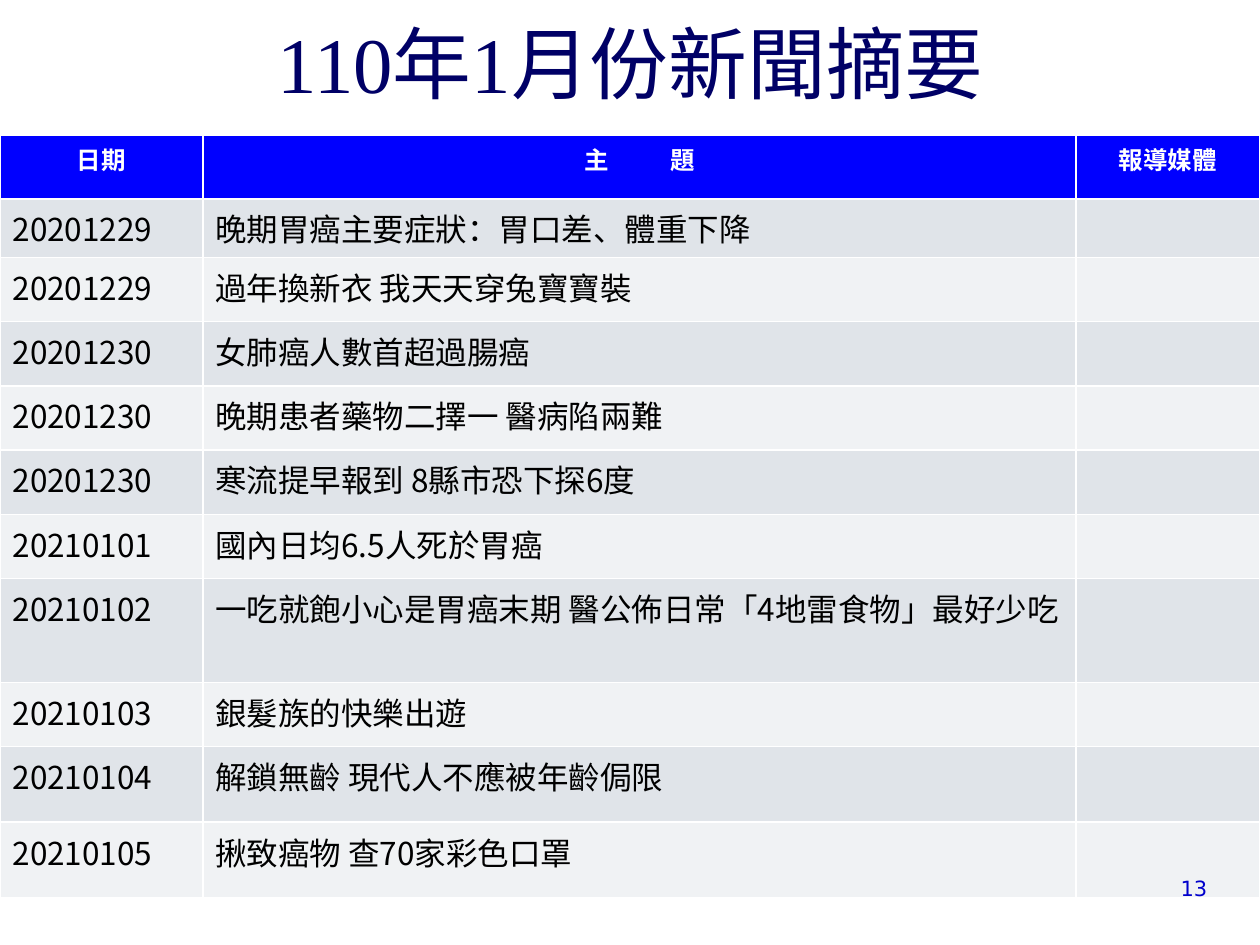
from lxml.etree import SubElement
from pptx import Presentation
from pptx.dml.color import RGBColor
from pptx.enum.text import MSO_ANCHOR, MSO_AUTO_SIZE, PP_ALIGN
from pptx.oxml.ns import qn
from pptx.util import Inches, Pt

NAVY = RGBColor(0x00, 0x00, 0x66)
BLUE = RGBColor(0x00, 0x00, 0xFF)
NUMBER_BLUE = RGBColor(0x00, 0x00, 0xCC)
WHITE = RGBColor(0xFF, 0xFF, 0xFF)
BLACK = RGBColor(0x00, 0x00, 0x00)
DARK_BAND = RGBColor(0xE0, 0xE4, 0xE9)
LIGHT_BAND = RGBColor(0xF0, 0xF2, 0xF4)

TITLE = {"name": "Times New Roman", "size": Pt(45)}
HEADER = {"name": "Noto Sans CJK SC", "size": Pt(14), "bold": True}
BODY = {"name": "Noto Sans CJK SC", "size": Pt(18), "bold": False}
NUMBER = {"name": "DejaVu Sans", "size": Pt(12)}


def write(paragraph, text, style, color, align):
    paragraph.alignment = align
    span = paragraph.add_run()
    span.text = text
    for name, value in style.items():
        setattr(span.font, name, value)
    span.font.color.rgb = color
    east_asian = SubElement(span.font._element, qn("a:ea"))
    east_asian.set("typeface", "Noto Sans CJK SC")
    return span


deck = Presentation()
deck.slide_width = Inches(10)
deck.slide_height = Inches(7.5)
page = deck.slides.add_slide(deck.slide_layouts[5])

title = page.shapes.title
title.left, title.top = Inches(0.63), Inches(0.34)
title.width, title.height = Inches(8.75), Inches(0.58)
title.text_frame.auto_size = MSO_AUTO_SIZE.NONE
title.text_frame.vertical_anchor = MSO_ANCHOR.BOTTOM
write(title.text_frame.paragraphs[0], "110年1月份新聞摘要", TITLE, NAVY, PP_ALIGN.CENTER)

headings = ["日期", "主 題", "報導媒體"]
news = [
    ("20201229", "晚期胃癌主要症狀：胃口差、體重下降"),
    ("20201229", "過年換新衣 我天天穿兔寶寶裝"),
    ("20201230", "女肺癌人數首超過腸癌"),
    ("20201230", "晚期患者藥物二擇一 醫病陷兩難"),
    ("20201230", "寒流提早報到 8縣市恐下探6度"),
    ("20210101", "國內日均6.5人死於胃癌"),
    ("20210102", "一吃就飽小心是胃癌末期 醫公佈日常「4地雷食物」最好少吃"),
    ("20210103", "銀髮族的快樂出遊"),
    ("20210104", "解鎖無齡 現代人不應被年齡侷限"),
    ("20210105", "揪致癌物 查70家彩色口罩"),
]
row_heights = [0.51, 0.35] + [0.51] * 7 + [0.6] * 2
column_widths = [1.61, 6.93, 1.46]

table = page.shapes.add_table(
    len(row_heights), len(column_widths), Inches(0), Inches(1.07), Inches(10), Inches(5.71)
).table
for row, height in zip(table.rows, row_heights):
    row.height = Inches(height)
for column, width in zip(table.columns, column_widths):
    column.width = Inches(width)

for column, heading in enumerate(headings):
    cell = table.cell(0, column)
    cell.fill.solid()
    cell.fill.fore_color.rgb = BLUE
    paragraph = cell.text_frame.paragraphs[0]
    first, space, last = heading.partition(" ")
    span = write(paragraph, first + space, HEADER, WHITE, PP_ALIGN.CENTER)
    if last:
        span.font._element.set("spc", "1600")
        write(paragraph, last, HEADER, WHITE, PP_ALIGN.CENTER)

for row, entry in enumerate(news, start=1):
    for column in range(len(headings)):
        cell = table.cell(row, column)
        cell.fill.solid()
        cell.fill.fore_color.rgb = DARK_BAND if row % 2 else LIGHT_BAND
        if column < len(entry):
            write(cell.text_frame.paragraphs[0], entry[column], BODY, BLACK, PP_ALIGN.LEFT)

number_box = page.shapes.add_textbox(Inches(8.94), Inches(6.9), Inches(0.74), Inches(0.3))
number_box.text_frame.word_wrap = True
write(number_box.text_frame.paragraphs[0], "13", NUMBER, NUMBER_BLUE, PP_ALIGN.RIGHT)

deck.save("out.pptx")
